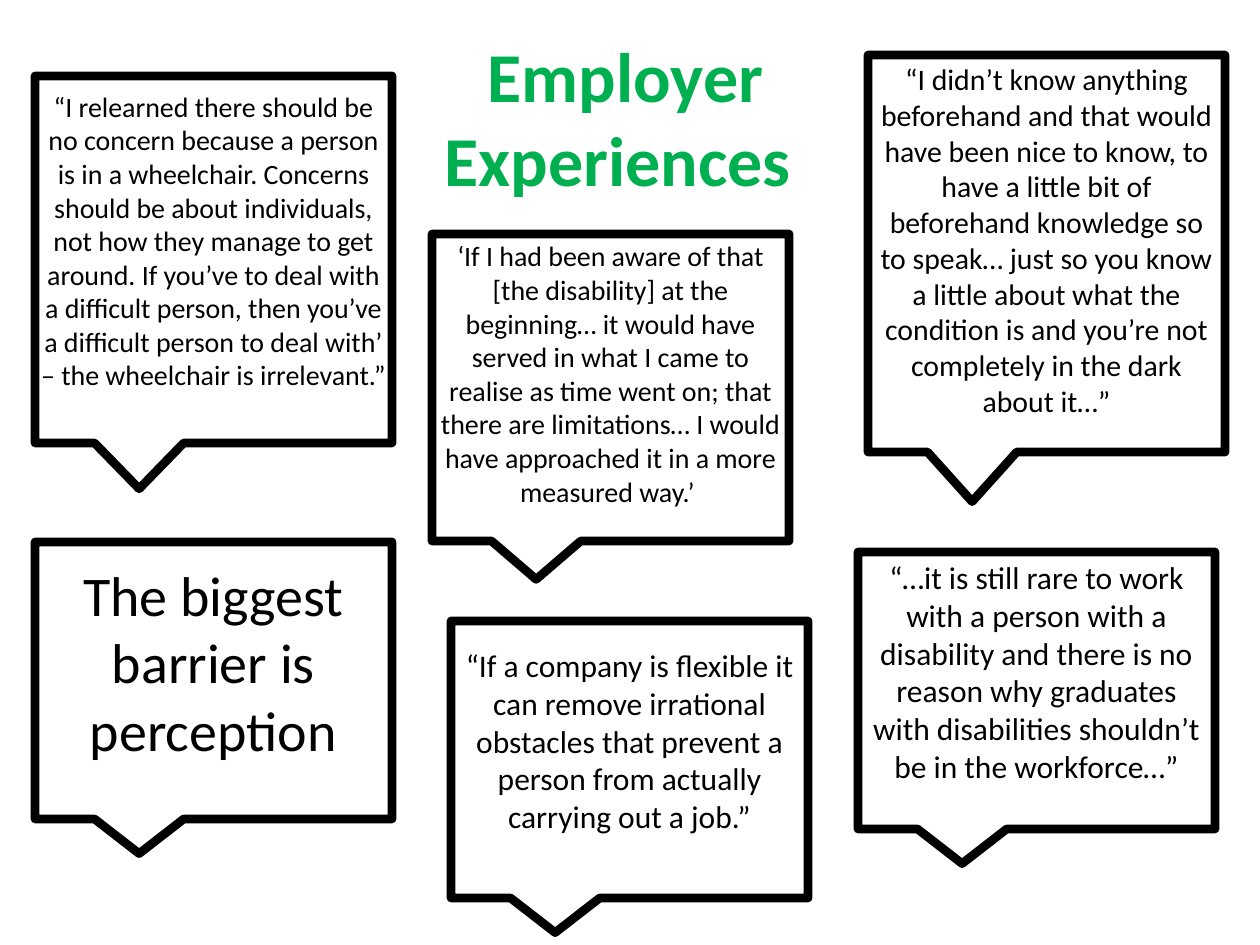
from dataclasses import dataclass

from pptx import Presentation
from pptx.dml.color import RGBColor
from pptx.enum.shapes import MSO_SHAPE
from pptx.enum.text import MSO_ANCHOR, MSO_AUTO_SIZE, PP_ALIGN
from pptx.slide import Slide
from pptx.text.text import TextFrame
from pptx.util import Emu, Pt

CALLOUT_SHAPE = MSO_SHAPE.RECTANGULAR_CALLOUT
CENTER = PP_ALIGN.CENTER
TOP, MIDDLE = MSO_ANCHOR.TOP, MSO_ANCHOR.MIDDLE
NO_AUTO_SIZE = MSO_AUTO_SIZE.NONE

EMU_PER_PX = 914400 / 126
SLIDE_WIDTH, SLIDE_HEIGHT = 1260, 945
TITLE_ONLY_LAYOUT = 5
FONT_NAME = "Calibri"
BLACK, GREEN = "000000", "00B050"
CALLOUT_WIDTH = 357
SHORT_HEIGHT = 277
SPACE_BELOW_QUOTE = 38
WIDE_MARGINS = (12, 6)
NARROW_MARGINS = (5, 5)


@dataclass(frozen=True)
class Quote:
    text: str
    left: int
    top: int
    height: int = SHORT_HEIGHT
    font_size: int = 18
    margins: tuple[int, int] = WIDE_MARGINS
    anchor: MSO_ANCHOR = MIDDLE


QUOTES = [
    Quote(
        "‘If I had been aware of that [the disability] at the beginning… it would "
        "have served in what I came to realise as time went on; that there are "
        "limitations… I would have approached it in a more measured way.’ ",
        432, 234, 307, 16, NARROW_MARGINS, TOP,
    ),
    Quote(
        "“I didn’t know anything beforehand and that would have been nice to know, "
        "to have a little bit of beforehand knowledge so to speak… just so you know "
        "a little about what the condition is and you’re not completely in the dark "
        "about it…”",
        868, 55, 397, 17, anchor=TOP,
    ),
    Quote("The biggest barrier is perception", 35, 542, font_size=32),
    Quote(
        "“…it is still rare to work with a person with a disability and there is no "
        "reason why graduates with disabilities shouldn’t be in the workforce…”",
        858, 552,
    ),
    Quote(
        "“If a company is flexible it can remove irrational obstacles that prevent "
        "a person from actually carrying out a job.”",
        451, 621,
    ),
    Quote(
        "“I relearned there should be no concern because a person is in a "
        "wheelchair. Concerns should be about individuals, not how they manage to "
        "get around. If you’ve to deal with a difficult person, then you’ve a "
        "difficult person to deal with’ – the wheelchair is irrelevant.” ",
        35, 76, 367, 16, NARROW_MARGINS,
    ),
]


def px(length: int) -> Emu:
    return Emu(round(length * EMU_PER_PX))


def color(value: str) -> RGBColor:
    return RGBColor.from_string(value)


def write_text(
    frame: TextFrame,
    text: str,
    size: int,
    text_color: str,
    margins: tuple[int, int],
    anchor: MSO_ANCHOR,
    space_below: int = 0,
    bold: bool = False,
) -> None:
    side, vertical = margins
    frame.word_wrap = True
    frame.auto_size = NO_AUTO_SIZE
    frame.vertical_anchor = anchor
    frame.margin_left = frame.margin_right = px(side)
    frame.margin_top = px(vertical)
    frame.margin_bottom = px(vertical + space_below)
    frame.text = text
    paragraph = frame.paragraphs[0]
    paragraph.alignment = CENTER
    paragraph.font.name = FONT_NAME
    paragraph.font.size = Pt(size)
    paragraph.font.bold = bold
    paragraph.font.color.rgb = color(text_color)


def add_title(slide: Slide) -> None:
    title = slide.shapes.title
    title.left, title.top = px(422), px(27)
    title.width, title.height = px(407), px(183)
    write_text(
        title.text_frame, "Employer Experiences ", 40, GREEN, WIDE_MARGINS, TOP, bold=True
    )


def add_callout(slide: Slide, quote: Quote) -> None:
    shape = slide.shapes.add_shape(
        CALLOUT_SHAPE, px(quote.left), px(quote.top), px(CALLOUT_WIDTH), px(quote.height)
    )
    shape.shadow.inherit = False
    shape.fill.background()
    shape.line.color.rgb = color(BLACK)
    shape.line.width = Pt(5)
    write_text(
        shape.text_frame, quote.text, quote.font_size, BLACK,
        quote.margins, quote.anchor, SPACE_BELOW_QUOTE,
    )


def main() -> None:
    presentation = Presentation()
    presentation.slide_width = px(SLIDE_WIDTH)
    presentation.slide_height = px(SLIDE_HEIGHT)
    slide = presentation.slides.add_slide(presentation.slide_layouts[TITLE_ONLY_LAYOUT])
    add_title(slide)
    for quote in QUOTES:
        add_callout(slide, quote)
    presentation.save("out.pptx")


if __name__ == "__main__":
    main()
